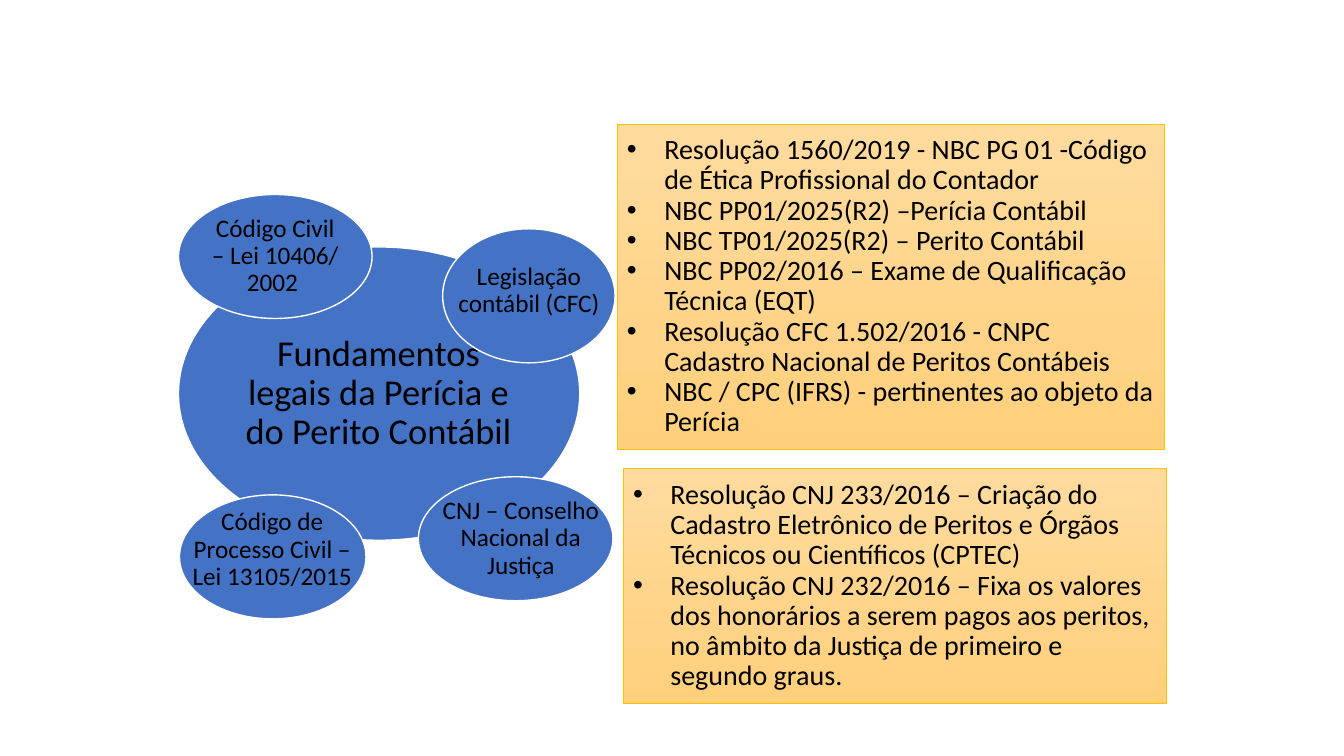
from dataclasses import dataclass

from lxml import etree
from pptx import Presentation
from pptx import util as u
from pptx.dml.color import RGBColor
from pptx.enum import shapes, text
from pptx.oxml import ns

BLUE, WHITE, BLACK, GOLD = "4472C4", "FFFFFF", "000000", "FFC000"
GRADIENT = ("FFDB9E", "FFD07C")
FONT = "Calibri"
BULLET_INDENT = 0.37

Box = tuple[float, float, float, float]  # left, top, width, height in inches


@dataclass
class Bubble:
    label: str
    ellipse: Box
    label_box: Box
    size: int = 18
    inset: float = 0.03


@dataclass
class Panel:
    box: Box
    items: list[str]


BUBBLES = [
    Bubble("Fundamentos legais da Perícia e do Perito Contábil",
           (1.77, 2.45, 3.98, 2.91), (2.35, 2.88, 2.81, 2.05), 26, 0.04),
    Bubble("Código de Processo Civil – Lei 13105/2015",
           (1.78, 4.91, 1.85, 1.23), (1.86, 5.02, 1.68, 0.87)),
    Bubble("Legislação contábil (CFC)",
           (4.39, 2.27, 1.71, 1.33), (4.39, 2.36, 1.71, 1.05)),
    Bubble("CNJ – Conselho Nacional da Justiça",
           (4.15, 4.73, 1.93, 1.23), (4.34, 4.91, 1.65, 0.87)),
    Bubble("Código Civil – Lei 10406/ 2002 ",
           (1.77, 1.93, 1.92, 1.23), (2.05, 2.11, 1.36, 0.87)),
]

PANELS = [
    Panel((6.12, 1.23, 5.43, 3.23), [
        "Resolução 1560/2019 - NBC PG 01 -Código de Ética Profissional do Contador",
        "NBC PP01/2025(R2) –Perícia Contábil",
        "NBC TP01/2025(R2) – Perito Contábil",
        "NBC PP02/2016 – Exame de Qualificação Técnica (EQT)",
        "Resolução CFC 1.502/2016 - CNPC Cadastro Nacional de Peritos Contábeis",
        "NBC / CPC (IFRS) - pertinentes ao objeto da Perícia",
    ]),
    Panel((6.18, 4.65, 5.39, 2.33), [
        "Resolução CNJ 233/2016 – Criação do Cadastro Eletrônico de Peritos e "
        "Órgãos Técnicos ou Científicos (CPTEC)",
        "Resolução CNJ 232/2016 – Fixa os valores dos honorários a serem pagos "
        "aos peritos, no âmbito da Justiça de primeiro e segundo graus.",
    ]),
]


def color(value: str) -> RGBColor:
    return RGBColor.from_string(value)


def inches(box: Box) -> list[u.Length]:
    return [u.Inches(value) for value in box]


def add_outlined_shape(slide, kind, box: Box, line: str, width: float):
    shape = slide.shapes.add_shape(kind, *inches(box))
    shape.shadow.inherit = False
    shape.line.color.rgb = color(line)
    shape.line.width = u.Pt(width)
    return shape


def prepare_frame(frame, horizontal: float, vertical: float) -> None:
    """Set wrapping, middle anchor and insets of a text frame."""
    frame.word_wrap = True
    frame.vertical_anchor = text.MSO_ANCHOR.MIDDLE
    frame.margin_left = frame.margin_right = u.Inches(horizontal)
    frame.margin_top = frame.margin_bottom = u.Inches(vertical)


def write(paragraph, words: str, size: int, alignment) -> None:
    paragraph.alignment = alignment
    paragraph.line_spacing = 0.9
    run = paragraph.add_run()
    run.text = words
    run.font.name = FONT
    run.font.size = u.Pt(size)
    run.font.color.rgb = color(BLACK)


def add_bullet(paragraph) -> None:
    properties = paragraph._p.get_or_add_pPr()
    indent = u.Inches(BULLET_INDENT)
    properties.set("marL", str(indent))
    properties.set("indent", str(-indent))
    etree.SubElement(properties, ns.qn("a:buFont")).set("typeface", "Arial")
    etree.SubElement(properties, ns.qn("a:buChar")).set("char", "•")


def draw_bubble(slide, bubble: Bubble) -> None:
    ellipse = add_outlined_shape(slide, shapes.MSO_SHAPE.OVAL, bubble.ellipse, WHITE, 1)
    ellipse.fill.solid()
    ellipse.fill.fore_color.rgb = color(BLUE)
    frame = slide.shapes.add_textbox(*inches(bubble.label_box)).text_frame
    prepare_frame(frame, bubble.inset, bubble.inset)
    write(frame.paragraphs[0], bubble.label, bubble.size, text.PP_ALIGN.CENTER)


def draw_panel(slide, panel: Panel) -> None:
    rectangle = add_outlined_shape(slide, shapes.MSO_SHAPE.RECTANGLE, panel.box, GOLD, 0.5)
    rectangle.fill.gradient()
    rectangle.fill.gradient_angle = 270
    for stop, value in zip(rectangle.fill.gradient_stops, GRADIENT):
        stop.color.rgb = color(value)
    frame = rectangle.text_frame
    prepare_frame(frame, 0.1, 0.05)
    for index, item in enumerate(panel.items):
        paragraph = frame.add_paragraph() if index else frame.paragraphs[0]
        add_bullet(paragraph)
        write(paragraph, item, 20, text.PP_ALIGN.LEFT)


def main() -> None:
    presentation = Presentation()
    presentation.slide_width = u.Inches(13.33)
    presentation.slide_height = u.Inches(7.5)
    slide = presentation.slides.add_slide(presentation.slide_layouts[6])
    for bubble in BUBBLES:
        draw_bubble(slide, bubble)
    for panel in PANELS:
        draw_panel(slide, panel)
    presentation.save("out.pptx")


if __name__ == "__main__":
    main()
